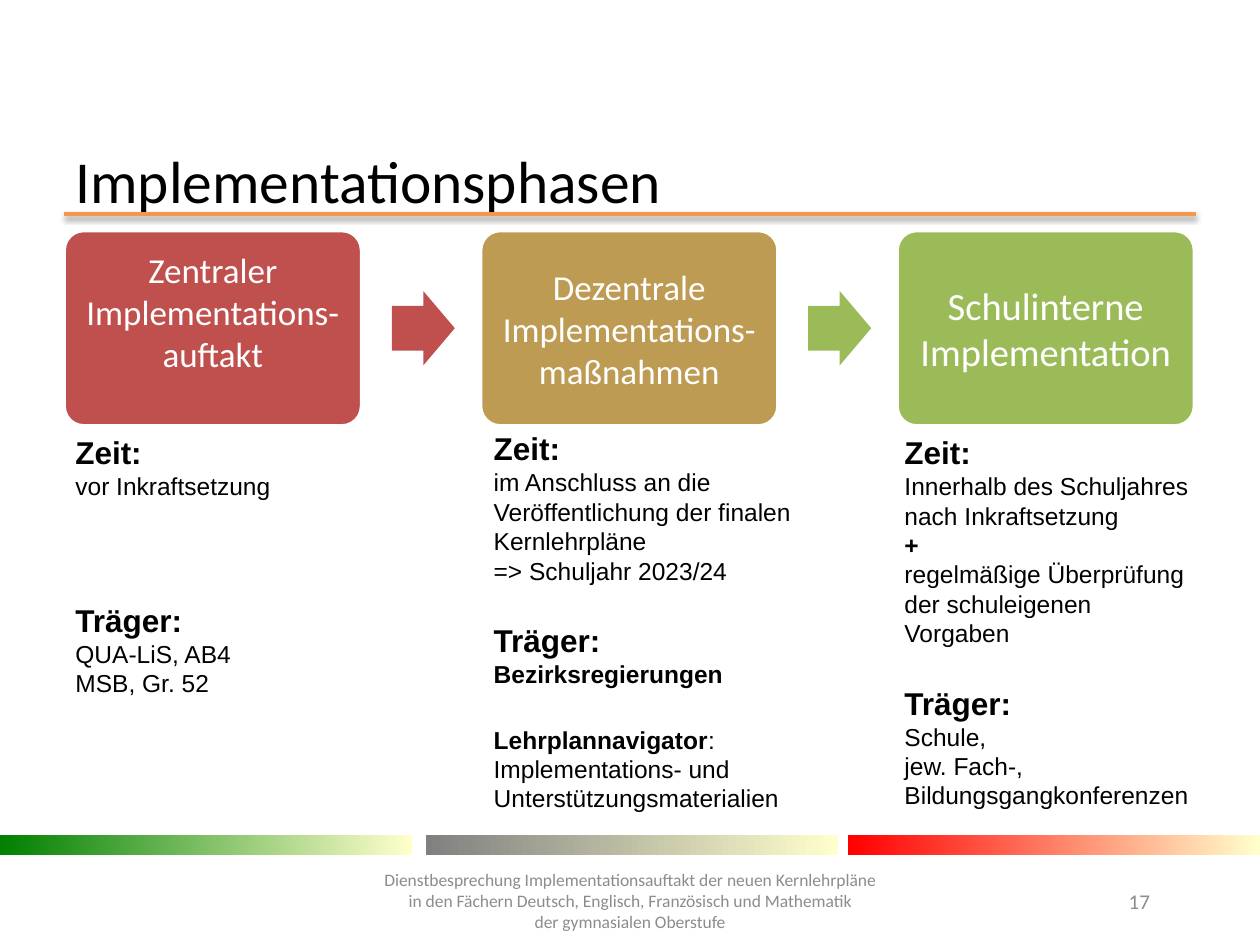
from dataclasses import dataclass

import pptx
import pptx.util
import pptx.dml.color
import pptx.enum.shapes
import pptx.enum.text
import pptx.oxml
import pptx.oxml.ns

Inches, Pt = pptx.util.Inches, pptx.util.Pt
RGBColor = pptx.dml.color.RGBColor
MSO_SHAPE = pptx.enum.shapes.MSO_SHAPE
ANCHOR = pptx.enum.text.MSO_ANCHOR
ALIGN = pptx.enum.text.PP_ALIGN

BLACK = RGBColor(0x00, 0x00, 0x00)
WHITE = RGBColor(0xFF, 0xFF, 0xFF)
GREY = RGBColor(0x8C, 0x8C, 0x8C)
ORANGE = RGBColor(0xF7, 0x96, 0x46)
RED = RGBColor(0xC0, 0x50, 0x4D)
OCHRE = RGBColor(0xBD, 0x9B, 0x53)
GREEN = RGBColor(0x9B, 0xBB, 0x59)
CREAM = RGBColor(0xFF, 0xFF, 0xCC)
BAR_GREEN = RGBColor(0x00, 0x80, 0x00)
BAR_GREY = RGBColor(0x80, 0x80, 0x80)
BAR_RED = RGBColor(0xFF, 0x00, 0x00)

PHASE_LEFT, PHASE_STEP = 0.51, 3.305
LINE_GAP = 20.7  # height of one 18 pt line


@dataclass
class Line:
    text: str
    bold: bool = False
    size: float = 14
    before: float = 0
    tail: str = ""  # regular text after the bold part


@dataclass
class Phase:
    name: str
    size: float
    color: RGBColor
    inset: float
    bottom_inset: float
    text_box: tuple[float, float, float, float]
    lines: list[Line]


def heading(text: str, before: float = 0) -> Line:
    return Line(text, True, 18, before)


PHASES = [
    Phase("Zentraler Implementations-auftakt", 20, RED, 0.08, 0.34, (0.5, 3.39, 2.37, 2.86), [
        heading("Zeit:"),
        Line("vor Inkraftsetzung"),
        heading("Träger:", 57.5),
        Line("QUA-LiS, AB4"),
        Line("MSB, Gr. 52"),
    ]),
    Phase("Dezentrale Implementations-maßnahmen", 20, OCHRE, 0.08, 0.08, (3.82, 3.36, 2.6, 3.2), [
        heading("Zeit:"),
        Line("im Anschluss an die Veröffentlichung der finalen Kernlehrpläne"),
        Line("=> Schuljahr 2023/24"),
        heading("Träger:", LINE_GAP),
        Line("Bezirksregierungen", True),
        Line("Lehrplannavigator", True, before=LINE_GAP, tail=":"),
        Line("Implementations- und Unterstützungsmaterialien"),
    ]),
    Phase("Schulinterne Implementation", 22, GREEN, 0.09, 0.09, (7.08, 3.39, 2.48, 3.2), [
        heading("Zeit:"),
        Line("Innerhalb des Schuljahres nach Inkraftsetzung"),
        Line("+", True),
        Line("regelmäßige Überprüfung der schuleigenen Vorgaben"),
        heading("Träger:", LINE_GAP),
        Line("Schule,"),
        Line("jew. Fach-, Bildungsgangkonferenzen"),
    ]),
]
FOOTER = [
    "Dienstbesprechung Implementationsauftakt der neuen Kernlehrpläne",
    "in den Fächern Deutsch, Englisch, Französisch und Mathematik",
    "der gymnasialen Oberstufe",
]


def add_run(p, text: str, size: float, color: RGBColor, font: str = "Calibri", bold: bool = False):
    r = p.add_run()
    r.text = text
    r.font.name, r.font.size, r.font.bold = font, Pt(size), bold
    r.font.color.rgb = color


def add_shape(s, kind, left: float, top: float, width: float, height: float):
    sp = s.shapes.add_shape(kind, Inches(left), Inches(top), Inches(width), Inches(height))
    sp.shadow.inherit = False
    sp.line.fill.background()
    return sp


def add_text_box(s, left: float, top: float, width: float, height: float):
    tf = s.shapes.add_textbox(Inches(left), Inches(top), Inches(width), Inches(height)).text_frame
    tf.word_wrap = True
    return tf


def add_title(s, text: str):
    sp = s.shapes.title
    sp.left, sp.top, sp.width, sp.height = Inches(0.5), Inches(1.23), Inches(9), Inches(0.39)
    tf = sp.text_frame
    tf.auto_size = pptx.enum.text.MSO_AUTO_SIZE.NONE
    tf.vertical_anchor = ANCHOR.MIDDLE
    p = tf.paragraphs[0]
    p.alignment = ALIGN.LEFT
    add_run(p, text, 34, BLACK)


def add_title_rule(s):
    line = s.shapes.add_connector(pptx.enum.shapes.MSO_CONNECTOR.STRAIGHT,
                                  Inches(0.51), Inches(1.7), Inches(9.49), Inches(1.7))
    line.line.color.rgb = ORANGE
    line.line.width = Pt(2)
    line._element.spPr.append(pptx.oxml.parse_xml(
        f'<a:effectLst {pptx.oxml.ns.nsdecls("a")}>'
        '<a:outerShdw blurRad="39370" dist="20320" dir="5400000" rotWithShape="0">'
        '<a:srgbClr val="000000"><a:alpha val="38000"/></a:srgbClr>'
        '</a:outerShdw></a:effectLst>'))


def add_gradient_bar(s, left: float, color: RGBColor):
    sp = add_shape(s, MSO_SHAPE.RECTANGLE, left, 6.63, 3.27, 0.16)
    sp.fill.gradient()
    sp.fill.gradient_angle = 0
    for stop, rgb in zip(sp.fill.gradient_stops, (color, CREAM)):
        stop.color.rgb = rgb


def add_phase_box(s, left: float, phase: Phase):
    sp = add_shape(s, MSO_SHAPE.ROUNDED_RECTANGLE, left, 1.83, 2.36, 1.55)
    sp.adjustments[0] = 0.1
    sp.fill.solid()
    sp.fill.fore_color.rgb = phase.color
    sp.line.color.rgb = WHITE
    sp.line.width = Pt(2)
    tf = sp.text_frame
    tf.word_wrap = True
    tf.vertical_anchor = ANCHOR.MIDDLE
    tf.margin_left = tf.margin_right = tf.margin_top = Inches(phase.inset)
    tf.margin_bottom = Inches(phase.bottom_inset)
    p = tf.paragraphs[0]
    p.alignment = ALIGN.CENTER
    add_run(p, phase.name, phase.size, WHITE)


def add_arrow(s, left: float, color: RGBColor):
    sp = add_shape(s, MSO_SHAPE.RIGHT_ARROW, left, 2.31, 0.5, 0.59)
    sp.adjustments[0] = 0.6
    sp.fill.solid()
    sp.fill.fore_color.rgb = color


def add_details(s, phase: Phase):
    tf = add_text_box(s, *phase.text_box)
    for i, line in enumerate(phase.lines):
        p = tf.add_paragraph() if i else tf.paragraphs[0]
        if line.before:
            p.space_before = Pt(line.before)
        add_run(p, line.text, line.size, BLACK, "Arial", line.bold)
        if line.tail:
            add_run(p, line.tail, line.size, BLACK, "Arial")


def add_footer(s):
    add_run(add_text_box(s, 8.86, 7, 0.64, 0.4).paragraphs[0], "17", 12, GREY)
    tf = add_text_box(s, 2.56, 6.87, 4.88, 0.56)
    tf.vertical_anchor = ANCHOR.MIDDLE
    p = tf.paragraphs[0]
    p.alignment = ALIGN.CENTER
    for i, text in enumerate(FOOTER):
        if i:
            p.add_line_break()
        add_run(p, text, 10, GREY)


def main():
    prs = pptx.Presentation()
    prs.slide_width, prs.slide_height = Inches(10), Inches(7.5)
    s = prs.slides.add_slide(prs.slide_layouts[5])
    add_title_rule(s)
    for left, color in ((0, BAR_GREEN), (3.38, BAR_GREY), (6.73, BAR_RED)):
        add_gradient_bar(s, left, color)
    add_title(s, "Implementationsphasen")
    for i, phase in enumerate(PHASES):
        add_phase_box(s, PHASE_LEFT + i * PHASE_STEP, phase)
        add_details(s, phase)
    for i, color in enumerate((RED, GREEN)):
        add_arrow(s, PHASE_LEFT + 2.6 + i * PHASE_STEP, color)
    add_footer(s)
    prs.save("out.pptx")


if __name__ == "__main__":
    main()
